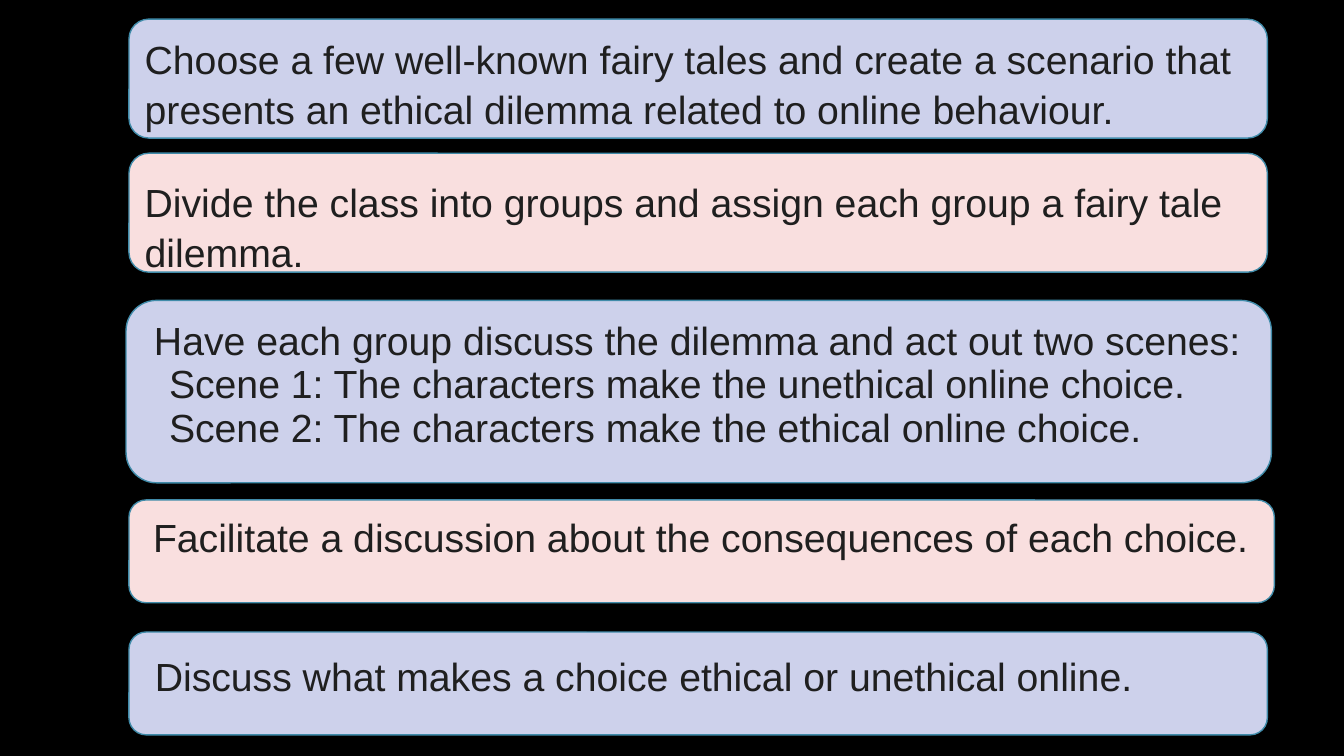
from dataclasses import dataclass

from pptx import Presentation
from pptx.dml.color import RGBColor as Color
from pptx.enum.shapes import MSO_SHAPE as Shape
from pptx.enum.text import MSO_ANCHOR as Anchor, PP_ALIGN as Align
from pptx.util import Inches, Pt


@dataclass(frozen=True)
class Theme:
    background: Color = Color.from_string("000000")
    lavender: Color = Color.from_string("CDD1EB")
    blush: Color = Color.from_string("F9DFDF")
    outline: Color = Color.from_string("408BA9")
    ink: Color = Color.from_string("1F1F1F")
    font: str = "Arial"
    size: Pt = Pt(28)
    outline_width: Pt = Pt(1)
    tight: Pt = Pt(21)
    gap: Pt = Pt(10)
    loose: float = 1.07


class Page:
    """Draws step cards on one slide, with lengths in percent of its size."""

    def __init__(self, deck, theme):
        self.deck = deck
        self.theme = theme
        self.slide = deck.slides.add_slide(deck.slide_layouts[6])
        fill = self.slide.background.fill
        fill.solid()
        fill.fore_color.rgb = theme.background

    def across(self, percent):
        return round(self.deck.slide_width * percent / 100)

    def down(self, percent):
        return round(self.deck.slide_height * percent / 100)

    def card(self, left, top, width, height, color, inset):
        box = self.slide.shapes.add_shape(
            Shape.ROUNDED_RECTANGLE,
            self.across(left), self.down(top), self.across(width), self.down(height))
        box.shadow.inherit = False
        box.fill.solid()
        box.fill.fore_color.rgb = color
        box.line.color.rgb = self.theme.outline
        box.line.width = self.theme.outline_width
        frame = box.text_frame
        frame.word_wrap = True
        frame.vertical_anchor = Anchor.TOP
        frame.margin_top = self.down(inset)
        frame.margin_bottom = 0
        return frame

    def lines(self, frame, texts, indents):
        frame.text = "\n".join(texts)
        for para, indent in zip(frame.paragraphs, indents):
            para.alignment = Align.LEFT
            if indent:
                para.line_spacing = self.theme.tight
                para.space_after = self.theme.gap
                para._p.get_or_add_pPr().set("marL", str(self.across(indent)))
            else:
                para.line_spacing = self.theme.loose
            for span in para.runs:
                span.font.name = self.theme.font
                span.font.size = self.theme.size
                span.font.color.rgb = self.theme.ink


STEPS = [
    ((9.6, 2.53, 84.7, 15.73), 0.87, [0],
     ["Choose a few well-known fairy tales and create a scenario that "
      "presents an ethical dilemma related to online behaviour."]),
    ((9.6, 20.27, 84.7, 15.73), 2.07, [0],
     ["Divide the class into groups and assign each group a fairy tale dilemma."]),
    ((9.38, 39.73, 85.22, 24.13), 3.27, [0.68, 1.8, 1.8],
     ["Have each group discuss the dilemma and act out two scenes:",
      "Scene 1: The characters make the unethical online choice.",
      "Scene 2: The characters make the ethical online choice."]),
    ((9.6, 66.13, 85.22, 13.6), 3.47, [0.68],
     ["Facilitate a discussion about the consequences of each choice."]),
    ((9.6, 83.6, 84.7, 13.6), 4.4, [0.81],
     ["Discuss what makes a choice ethical or unethical online."]),
]


def main():
    deck = Presentation()
    deck.slide_width, deck.slide_height = Inches(13.33), Inches(7.5)
    theme = Theme()
    page = Page(deck, theme)
    colors = (theme.lavender, theme.blush)
    for number, (place, inset, indents, texts) in enumerate(STEPS):
        frame = page.card(*place, colors[number % 2], inset)
        page.lines(frame, texts, indents)
    deck.save("out.pptx")


if __name__ == "__main__":
    main()
